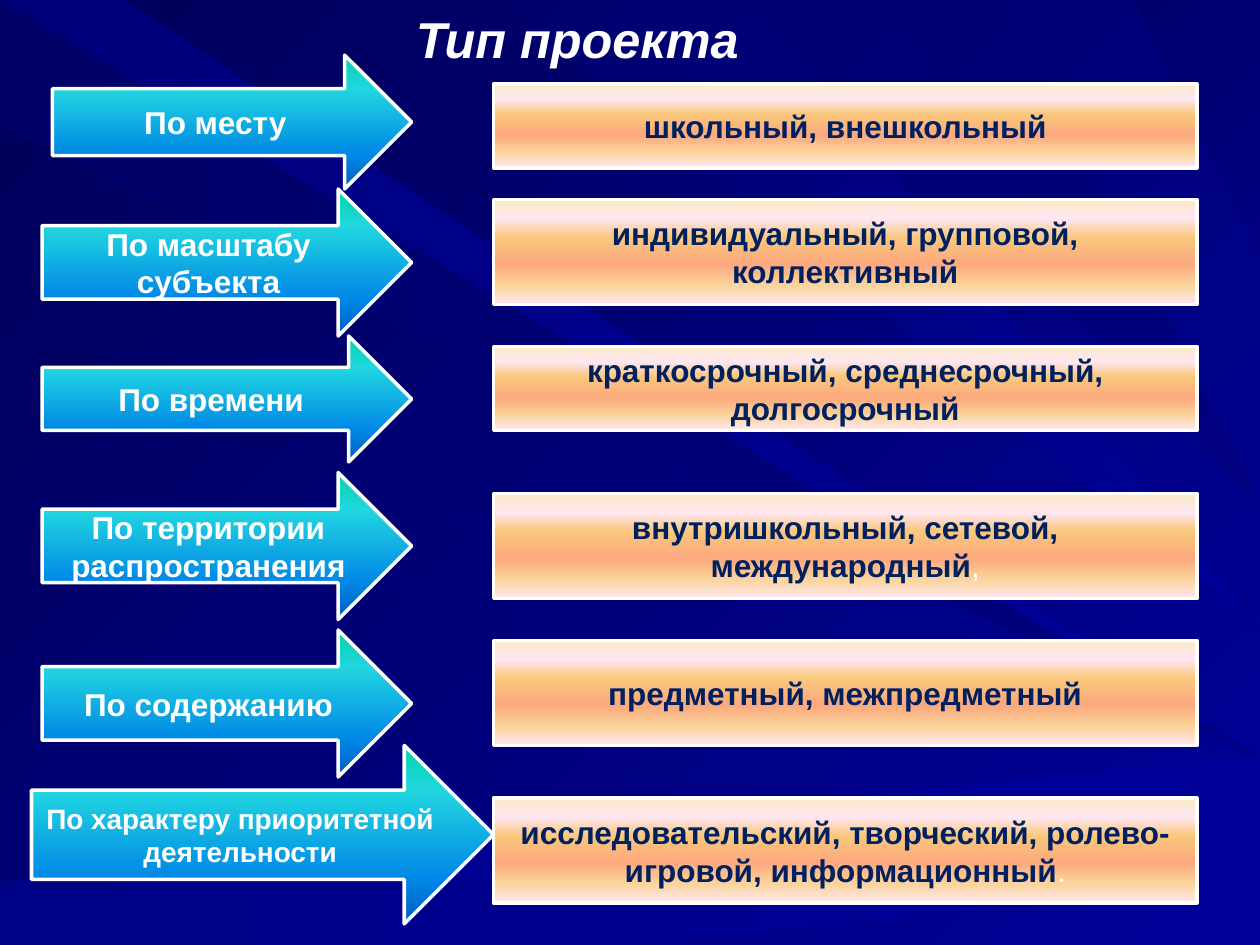
import math

import pptx
import pptx.util
import pptx.dml.color
import pptx.enum.shapes
import pptx.enum.text
import pptx.oxml.ns
from lxml import etree

# Content: label, label size, arrow (left, top, right, height), box (top, height), kinds, faint ending
# Positions are cells of a 120 x 90 grid over the slide.
TITLE = "Тип проекта"
ROWS = [
    ("По месту", "body", (5, 5.25, 39.2, 12.75), (8, 8), "школьный, внешкольный", ""),
    ("По масштабу субъекта", "body", (4, 18, 39.2, 14), (19, 10),
     "индивидуальный, групповой, коллективный", ""),
    ("По времени", "body", (4, 32, 39.2, 12), (33, 8),
     "краткосрочный, среднесрочный, долгосрочный", ""),
    ("По территории распространения", "body", (4, 45, 39.2, 14), (47, 10),
     "внутришкольный, сетевой, международный", ","),
    ("По содержанию", "body", (4, 60, 39.2, 14), (61, 10), "предметный, межпредметный", ""),
    ("По характеру приоритетной деятельности", "small", (3, 71, 47, 17), (76, 10),
     "исследовательский, творческий, ролево-игровой, информационный", "."),
]
BOX_LEFT, BOX_WIDTH = 47, 67

# Theme
THEME = {
    "font": "Arial", "white": "FFFFFF", "navy": "002060", "line": 2,
    "title": 28.8, "body": 18, "small": 16,
    "back": ("000058", "000099"), "dim": "000080", "bright": "000099", "glow": "39399E",
    "box": [(0, "FBEAC7"), (18, "FEE7F2"), (36, "FAC77D"), (61, "FBA97D"),
            (82, "FBD49C"), (100, "FEE7F2")],
    "arrow": [(0, "03D4A8"), (25, "21D6E0"), (75, "0087E6"), (100, "005CBF")],
}

# Background rays by the edge they leave: start and width in inches, first colour, end shade
LEFT_RAYS = [
    (0, 0.9, "000069", "dim"), (6, 0.3, "000071", "dim"), (6.65, 0.4, "00008C", "bright"),
    (7.35, 0.15, "000085", "bright"), (1.6, 0.7, "00006B", "dim"),
    (2.8, 0.6, "00007E", "bright"), (3.75, 0.6, "00007B", "bright"),
    (5.5, 0.1, "00008E", "bright"),
]
TOP_RAYS = [
    (0.25, 0.75, "00007B", "bright"), (4, 0.2, "000083", "bright"),
    (4.25, 0.65, "00006D", "bright"), (5.4, 0.1, "000073", "bright"),
    (6.05, 0.55, "000073", "dim"), (8.85, 0.45, "00006B", "dim"),
    (9.4, 0.25, "00006D", "dim"), (2.25, 0.2, "000070", "bright"),
    (6.85, 0.85, "000073", "dim"), (7.85, 0.1, "000078", "bright"),
]
GLINT = [(7.55, 7), (8, 7.35), (10, 6.95), (10, 6.7)]
HORIZON, TIP = 5.6, 0.05

rgb = pptx.dml.color.RGBColor.from_string
qn = pptx.oxml.ns.qn
SHAPE = pptx.enum.shapes.MSO_SHAPE


def cells(n):
    return pptx.util.Inches(n / 12)


def paint(fill, owner, stops, angle):
    """Fill with a gradient of (percent, colour) stops; the angle runs clockwise."""
    fill.gradient()
    grad = next(owner.iter(qn("a:gradFill")))
    for child in list(grad):
        grad.remove(child)
    gs_list = etree.SubElement(grad, qn("a:gsLst"))
    for pos, colour in stops:
        gs = etree.SubElement(gs_list, qn("a:gs"), pos=str(pos * 1000))
        etree.SubElement(gs, qn("a:srgbClr"), val=colour)
    etree.SubElement(grad, qn("a:lin"), ang=str(angle * 60000), scaled="0")


def write(tf, runs, size, **extra):
    """Centre one paragraph of (text, colour, bold) runs."""
    tf.word_wrap = True
    tf.vertical_anchor = pptx.enum.text.MSO_ANCHOR.MIDDLE
    p = tf.paragraphs[0]
    p.alignment = pptx.enum.text.PP_ALIGN.CENTER
    for text, colour, bold in runs:
        r = p.add_run()
        r.text = text
        r.font.color.rgb = rgb(THEME[colour])
        formats = {"name": THEME["font"], "size": pptx.util.Pt(THEME[size]), "bold": bold, **extra}
        for key, value in formats.items():
            setattr(r.font, key, value)


def add_ray(s, points, first, last, angle):
    builder = s.shapes.build_freeform(*points[0], scale=pptx.util.Inches(1))
    builder.add_line_segments(points[1:], close=True)
    sp = builder.convert_to_shape()
    sp.shadow.inherit = False
    sp.line.fill.background()
    paint(sp.fill, sp._element, [(0, first), (100, last)], angle)


def add_rays(s):
    """Rays from the left edge end low on the right; those from the top end along an ellipse."""
    for start, width, first, shade in LEFT_RAYS:
        end = HORIZON + (start + width / 2) / 8
        add_ray(s, [(0, start), (0, start + width), (10, end + TIP), (10, end)],
                first, THEME[shade], 0)
    for start, width, first, shade in TOP_RAYS:
        end = HORIZON * math.sqrt(1 - ((start + width / 2) / 10) ** 2)
        add_ray(s, [(start, 0), (start + width, 0), (10, end), (10, end + TIP)],
                first, THEME[shade], 45)
    add_ray(s, GLINT, THEME["bright"], THEME["glow"], 0)


def add_block(s, kind, frame, look, runs, size):
    sp = s.shapes.add_shape(kind, *map(cells, frame))
    sp.shadow.inherit = False
    paint(sp.fill, sp._element, THEME[look], 90)
    sp.line.color.rgb = rgb(THEME["white"])
    sp.line.width = pptx.util.Pt(THEME["line"])
    write(sp.text_frame, runs, size)


def main():
    prs = pptx.Presentation()
    prs.slide_width, prs.slide_height = cells(120), cells(90)
    s = prs.slides.add_slide(prs.slide_layouts[5])

    # Background
    paint(s.background.fill, s._element, zip((0, 100), THEME["back"]), 45)
    add_rays(s)

    # Title, in front of the rays
    title = s.shapes.title
    s.shapes._spTree.append(title._element)
    for key, value in zip(("left", "top", "width", "height"), (6, 2, 98, 3.4)):
        setattr(title, key, cells(value))
    write(title.text_frame, [(TITLE, "white", True)], "title", italic=True)

    # Boxes, then arrows from the bottom row up
    for _, _, _, (top, height), kinds, ending in ROWS:
        runs = [(kinds, "navy", True)] + ([(ending, "white", False)] if ending else [])
        add_block(s, SHAPE.RECTANGLE, (BOX_LEFT, top, BOX_WIDTH, height), "box", runs, "body")
    for label, size, (left, top, right, height), *_ in reversed(ROWS):
        add_block(s, SHAPE.RIGHT_ARROW, (left, top, right - left, height), "arrow",
                  [(label, "white", True)], size)

    prs.save("out.pptx")


if __name__ == "__main__":
    main()
